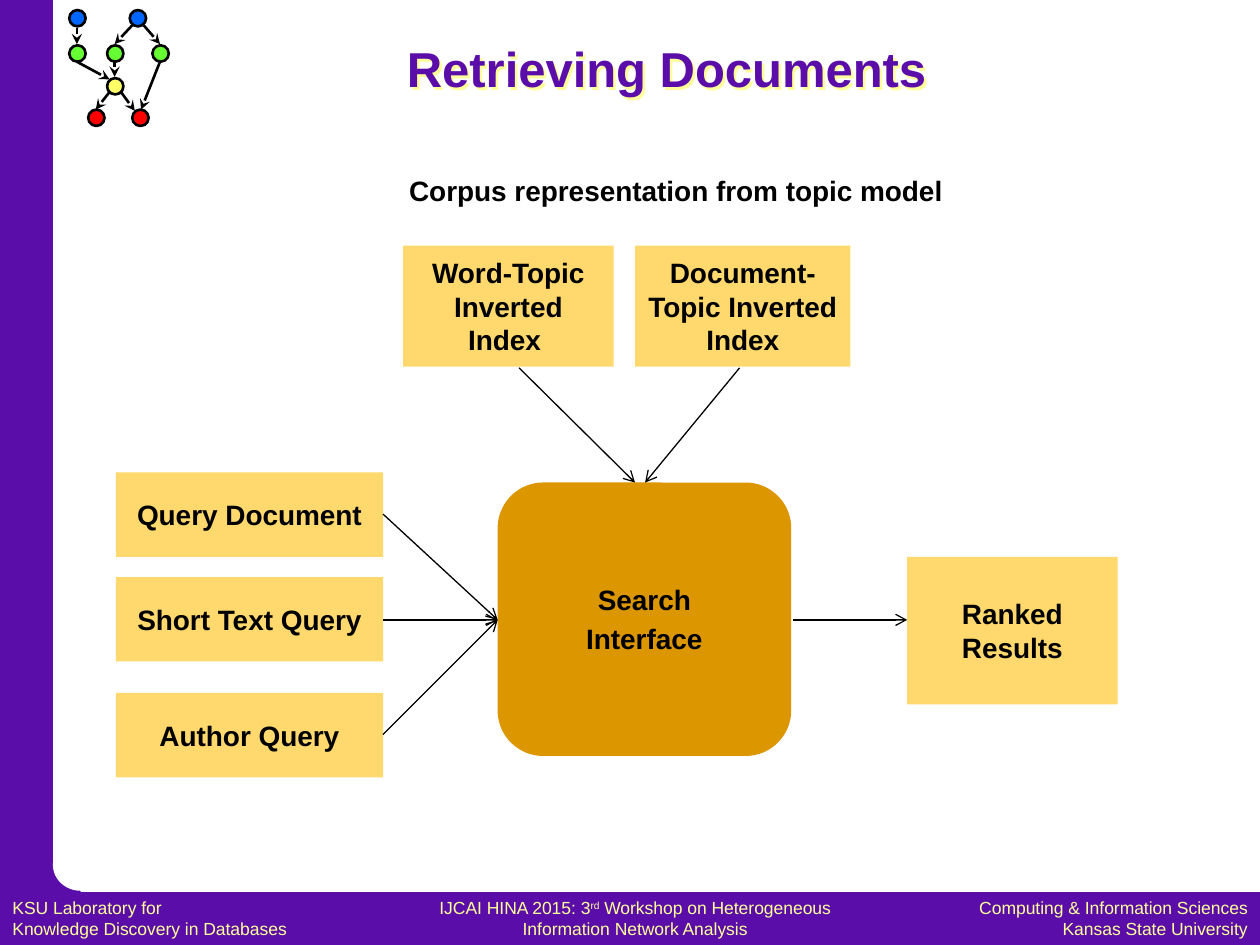
from lxml.etree import SubElement
from pptx import Presentation
from pptx.dml.color import RGBColor
from pptx.enum.shapes import MSO_CONNECTOR, MSO_SHAPE
from pptx.enum.text import MSO_ANCHOR, PP_ALIGN
from pptx.oxml.ns import qn
from pptx.util import Inches, Pt

PURPLE, CREAM, BLACK, WHITE = "5B0DAA", "FFFF99", "000000", "FFFFFF"
SAND, AMBER = "FFD96D", "DC9600"
BLUE, GREEN, YELLOW, RED = "0066FF", "66FF33", "FFFF66", "FF0000"


def color(code):
    return RGBColor.from_string(code)


def place(shape, box):
    shape.left, shape.top, shape.width, shape.height = map(Inches, box)


def style(frame, size, code, bold=False, align=PP_ALIGN.CENTER):
    for i, para in enumerate(frame.paragraphs):
        para.alignment = align
        para.space_before = Pt(0.2 * size if bold and i else 0)
        for run in para.runs:
            font = run.font
            font.name, font.size, font.bold = "Arial", Pt(size), bold
            font.color.rgb = color(code)


def add_shape(slide, kind, box, fill, line=None):
    shape = slide.shapes.add_shape(kind, *map(Inches, box))
    shape.shadow.inherit = False
    shape.fill.solid()
    shape.fill.fore_color.rgb = color(fill)
    if line:
        shape.line.color.rgb = color(line)
        shape.line.width = Pt(1.5)
    else:
        shape.line.fill.background()
    return shape


def add_block(slide, text, box, fill=SAND, kind=MSO_SHAPE.RECTANGLE):
    frame = add_shape(slide, kind, box, fill).text_frame
    frame.text = text
    frame.word_wrap = True
    frame.vertical_anchor = MSO_ANCHOR.MIDDLE
    style(frame, 16, BLACK, bold=True)


def add_label(slide, text, box, size, code, align, bold=False, wrap=False):
    frame = slide.shapes.add_textbox(*map(Inches, box)).text_frame
    frame.text = text
    frame.word_wrap = wrap
    style(frame, size, code, bold, align)
    return frame


def add_arrow(slide, start, end, width, head):
    arrow = slide.shapes.add_connector(
        MSO_CONNECTOR.STRAIGHT, *map(Inches, start + end))
    arrow.line.color.rgb = color(BLACK)
    arrow.line.width = Pt(width)
    SubElement(arrow.line._get_or_add_ln(), qn("a:tailEnd"), type=head)
    SubElement(arrow._element.spPr, qn("a:effectLst"))


def add_frame(slide):
    # Purple side and bottom bars with a rounded inner corner
    bar, dot = MSO_SHAPE.RECTANGLE, MSO_SHAPE.OVAL
    for kind, box, fill in (
            (bar, (0, 7.08, 10, 0.42), PURPLE),
            (bar, (0, 0, 0.42, 7.5), PURPLE),
            (bar, (0.2, 6.85, 0.44, 0.44), PURPLE),
            (dot, (0.42, 6.66, 0.44, 0.41), WHITE)):
        add_shape(slide, kind, box, fill)


def add_graph(slide):
    # Small network in the corner
    for left, top, fill in (
            (0.55, 0.36, GREEN), (0.55, 0.08, BLUE), (0.85, 0.36, GREEN),
            (1.03, 0.08, BLUE), (1.21, 0.36, GREEN), (0.85, 0.62, YELLOW),
            (0.7, 0.87, RED), (1.05, 0.87, RED)):
        add_shape(slide, MSO_SHAPE.OVAL, (left, top, 0.13, 0.13), fill, BLACK)
    for start, end in (
            ((0.61, 0.22), (0.61, 0.35)), ((1.05, 0.2), (0.91, 0.35)),
            ((1.14, 0.2), (1.27, 0.35)), ((0.61, 0.49), (0.87, 0.63)),
            ((0.91, 0.49), (0.91, 0.61)), ((1.27, 0.49), (1.12, 0.87)),
            ((0.96, 0.73), (1.07, 0.88)), ((0.87, 0.73), (0.76, 0.87))):
        add_arrow(slide, start, end, 1.5, "stealth")


def add_footer(slide):
    add_label(slide, "KSU Laboratory for\nKnowledge Discovery in Databases",
              (0, 7.07, 2.92, 0.38), 10, CREAM, PP_ALIGN.LEFT)
    add_label(slide, "Computing & Information Sciences\nKansas State University",
              (7.18, 7.07, 2.82, 0.43), 10, CREAM, PP_ALIGN.RIGHT)
    frame = add_label(slide, "IJCAI HINA 2015: 3", (3.08, 7.07, 3.92, 0.38),
                      10, CREAM, PP_ALIGN.CENTER, wrap=True)
    para = frame.paragraphs[0]
    mark, rest = para.add_run(), para.add_run()
    mark.text = "rd"
    rest.text = " Workshop on Heterogeneous Information Network Analysis"
    style(frame, 10, CREAM)
    mark._r.get_or_add_rPr().set("baseline", "30000")


def add_title(slide):
    title = slide.shapes.title
    place(title, (1.25, 0.08, 8.08, 0.92))
    frame = title.text_frame
    frame.text = "Retrieving Documents"
    frame.vertical_anchor = MSO_ANCHOR.MIDDLE
    style(frame, 28, PURPLE, bold=True)
    # Pale shadow behind the letters
    effects = SubElement(title._element.spPr, qn("a:effectLst"))
    shadow = SubElement(effects, qn("a:outerShdw"), dist=str(Pt(2)),
                        dir="2700000", algn="ctr", rotWithShape="0")
    SubElement(shadow, qn("a:srgbClr"), val=CREAM)


def add_flow(slide):
    # Queries on the left
    for text, top in (("Query Document", 3.75), ("Short Text Query", 4.58),
                      ("Author Query", 5.5)):
        add_block(slide, text, (0.92, top, 2.12, 0.67))
    # Search in the middle, with its indexes above
    add_block(slide, "Search\nInterface", (3.95, 3.83, 2.33, 2.17),
              AMBER, MSO_SHAPE.ROUNDED_RECTANGLE)
    add_block(slide, "Word-Topic Inverted Index ", (3.2, 1.95, 1.67, 0.96))
    add_block(slide, "Document-Topic Inverted Index", (5.04, 1.95, 1.71, 0.96))
    add_label(slide, "Corpus representation from topic model",
              (3.12, 1.33, 4.49, 0.37), 16, BLACK, PP_ALIGN.CENTER, bold=True)
    # Results on the right
    add_block(slide, "Ranked Results", (7.2, 4.42, 1.67, 1.17))
    for start, end in (
            ((3.04, 4.08), (3.95, 4.92)), ((3.04, 5.83), (3.95, 4.92)),
            ((3.04, 4.92), (3.95, 4.92)), ((4.12, 2.92), (5.04, 3.83)),
            ((5.87, 2.92), (5.12, 3.83)), ((6.29, 4.92), (7.2, 4.92))):
        add_arrow(slide, start, end, 0.75, "arrow")


def main():
    deck = Presentation()
    deck.slide_width, deck.slide_height = Inches(10), Inches(7.5)
    slide = deck.slides.add_slide(deck.slide_layouts[5])
    add_frame(slide)
    add_graph(slide)
    add_footer(slide)
    add_title(slide)
    add_flow(slide)
    deck.save("out.pptx")


if __name__ == "__main__":
    main()
